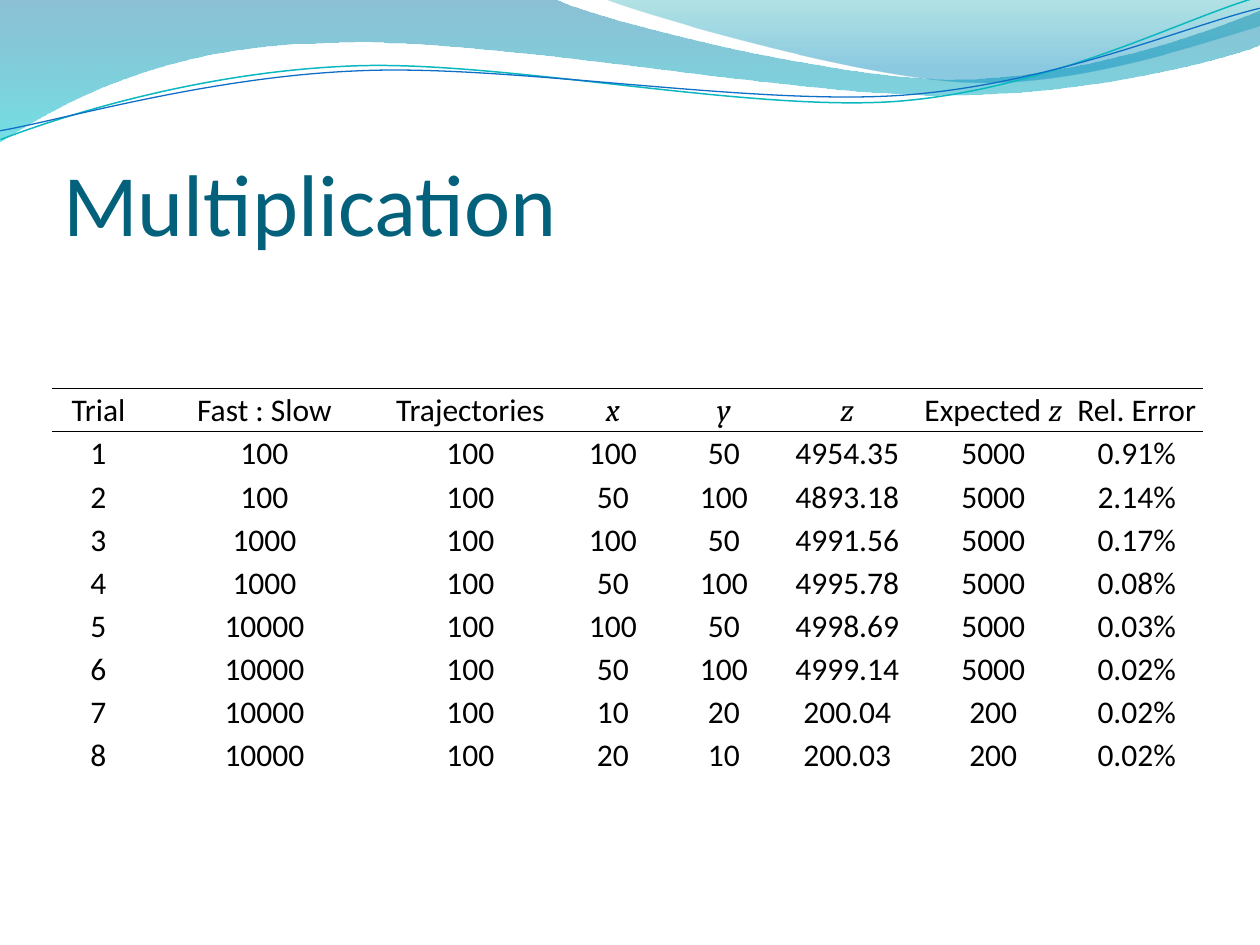
from lxml.etree import Element, SubElement as Sub
from pptx import Presentation
from pptx.dml.color import RGBColor
from pptx.enum.text import MSO_ANCHOR as Anchor, MSO_AUTO_SIZE as Auto, PP_ALIGN as Align
from pptx.oxml import parse_xml
from pptx.oxml.ns import qn
from pptx.util import Pt

PX = 914400 / 126
PLAIN = "{2D5ABB26-0587-4C30-8999-92F81FD0307C}"

WAVES = [
    ([(0, 0), (554, -1),
      (600, 21, 837, 79, 955, 79), (1074, 79, 1207, 33, 1260, 11),
      (1261, 45),
      (1238, 55, 1096, 96, 940, 95), (783, 95, 481, 35, 324, 43),
      (163, 45, 58, 105, -1, 142)],
     [(0, "0074A1", 45), (1, "00C6CF", 55)]),
    ([(604, -1),
      (640, 14, 859, 78, 969, 82), (1079, 87, 1211, 40, 1260, 26),
      (1260, 0)],
     [(0, "00A1A9", 30), (0.8, "008BBF", 45)]),
]
TILT = 357.3
LINES = [
    ([(-2, 110), (58, 90, 199, 52, 350, 53),
      (499, 53, 745, 118, 896, 114), (1049, 109, 1184, 45, 1260, 27)],
     "0AB8BF", 0.85),
    ([(-2, 101), (57, 94, 208, 57, 358, 58),
      (509, 58, 750, 112, 902, 108), (1052, 104, 1188, 52, 1262, 38)],
     "0F6FC6", 0.75),
]
TITLE = "Multiplication"
MATH = {"x", "y", "z"}
ROWS = [
    ["Trial", "Fast : Slow", "Trajectories", "x", "y", "z", ("Expected ", "z"), "Rel. Error"],
    ["1", "100", "100", "100", "50", "4954.35", "5000", "0.91%"],
    ["2", "100", "100", "50", "100", "4893.18", "5000", "2.14%"],
    ["3", "1000", "100", "100", "50", "4991.56", "5000", "0.17%"],
    ["4", "1000", "100", "50", "100", "4995.78", "5000", "0.08%"],
    ["5", "10000", "100", "100", "50", "4998.69", "5000", "0.03%"],
    ["6", "10000", "100", "50", "100", "4999.14", "5000", "0.02%"],
    ["7", "10000", "100", "10", "20", "200.04", "200", "0.02%"],
    ["8", "10000", "100", "20", "10", "200.03", "200", "0.02%"],
]
WIDTHS = [93, 239, 173, 112, 110, 137, 155, 132]
TALL = 388


def px(n):
    return round(n * PX)


def color(code):
    return RGBColor.from_string(code)


def font(run, face, size, code, slant=False):
    run.font.name = face
    run.font.size = Pt(size)
    run.font.color.rgb = color(code)
    run.font.italic = slant


def curve(slide, parts, close):
    ends = [(px(part[-2]), px(part[-1])) for part in parts]
    build = slide.shapes.build_freeform(*ends[0])
    build.add_line_segments(ends[1:], close=close)
    shape = build.convert_to_shape()
    shape.shadow.inherit = False
    nodes = list(shape._element.iter(qn("a:lnTo")))
    for node, part in zip(nodes, parts[1:]):
        if len(part) == 6:
            node.tag = qn("a:cubicBezTo")
            for i in (0, 1):
                x, y = part[2 * i:2 * i + 2]
                node.insert(i, Element(qn("a:pt"), x=str(px(x) - shape.left),
                                       y=str(px(y) - shape.top)))
    return shape


def wave(slide, parts, stops):
    shape = curve(slide, parts, True)
    shape.line.fill.background()
    shape.fill.gradient()
    shape.fill.gradient_angle = 270
    for stop, (pos, code, alpha) in zip(shape.fill.gradient_stops, stops):
        stop.position = pos
        stop.color.rgb = color(code)
    tints = list(shape._element.spPr.iter(qn("a:srgbClr")))
    for tint, (pos, code, alpha) in zip(tints, stops):
        Sub(tint, qn("a:alpha"), val=str(alpha * 1000))


def stroke(slide, parts, code, width):
    shape = curve(slide, parts, False)
    shape.rotation = TILT
    shape.fill.background()
    shape.line.color.rgb = color(code)
    shape.line.width = Pt(width)


def border(cell, sides):
    props = cell._tc.get_or_add_tcPr()
    for i, side in enumerate(sides):
        props.insert(i, parse_xml(
            f'<a:{side} xmlns:a="http://schemas.openxmlformats.org/drawingml/2006/main"'
            f' w="{Pt(0.5)}"><a:solidFill><a:srgbClr val="000000"/></a:solidFill></a:{side}>'))


def fill_cell(cell, text):
    cell.fill.background()
    cell.vertical_anchor = Anchor.MIDDLE
    cell.margin_left = cell.margin_right = cell.margin_top = px(3)
    cell.margin_bottom = 0
    para = cell.text_frame.paragraphs[0]
    para.alignment = Align.CENTER
    for word in (text if isinstance(text, tuple) else (text,)):
        run = para.add_run()
        run.text = word
        math = word in MATH
        font(run, "Cambria" if math else "Calibri", 18, "000000", math)


def add_grid(slide):
    table = slide.shapes.add_table(len(ROWS), len(WIDTHS), px(52), px(388),
                                   px(sum(WIDTHS)), px(TALL)).table
    table.first_row = table.horz_banding = False
    table._tbl.tblPr.find(qn("a:tableStyleId")).text = PLAIN
    for col, wide in zip(table.columns, WIDTHS):
        col.width = px(wide)
    for r, row in enumerate(ROWS):
        table.rows[r].height = px(TALL / len(ROWS))
        for c, text in enumerate(row):
            cell = table.cell(r, c)
            fill_cell(cell, text)
            if r == 0:
                border(cell, ("lnT", "lnB"))


def add_title(slide):
    title = slide.shapes.title
    title.left, title.top, title.width, title.height = map(px, (63, 97, 1134, 157))
    frame = title.text_frame
    frame.text = TITLE
    frame.auto_size = Auto.NONE
    frame.vertical_anchor = Anchor.BOTTOM
    frame.margin_left = frame.margin_right = frame.margin_bottom = 0
    frame.margin_top = px(6)
    para = frame.paragraphs[0]
    para.alignment = Align.LEFT
    font(para.runs[0], "Calibri", 50, "04617B")


def main():
    deck = Presentation()
    deck.slide_width, deck.slide_height = px(1260), px(945)
    slide = deck.slides.add_slide(deck.slide_layouts[5])
    for item in WAVES:
        wave(slide, *item)
    for item in LINES:
        stroke(slide, *item)
    add_title(slide)
    add_grid(slide)
    deck.save("out.pptx")


if __name__ == "__main__":
    main()
